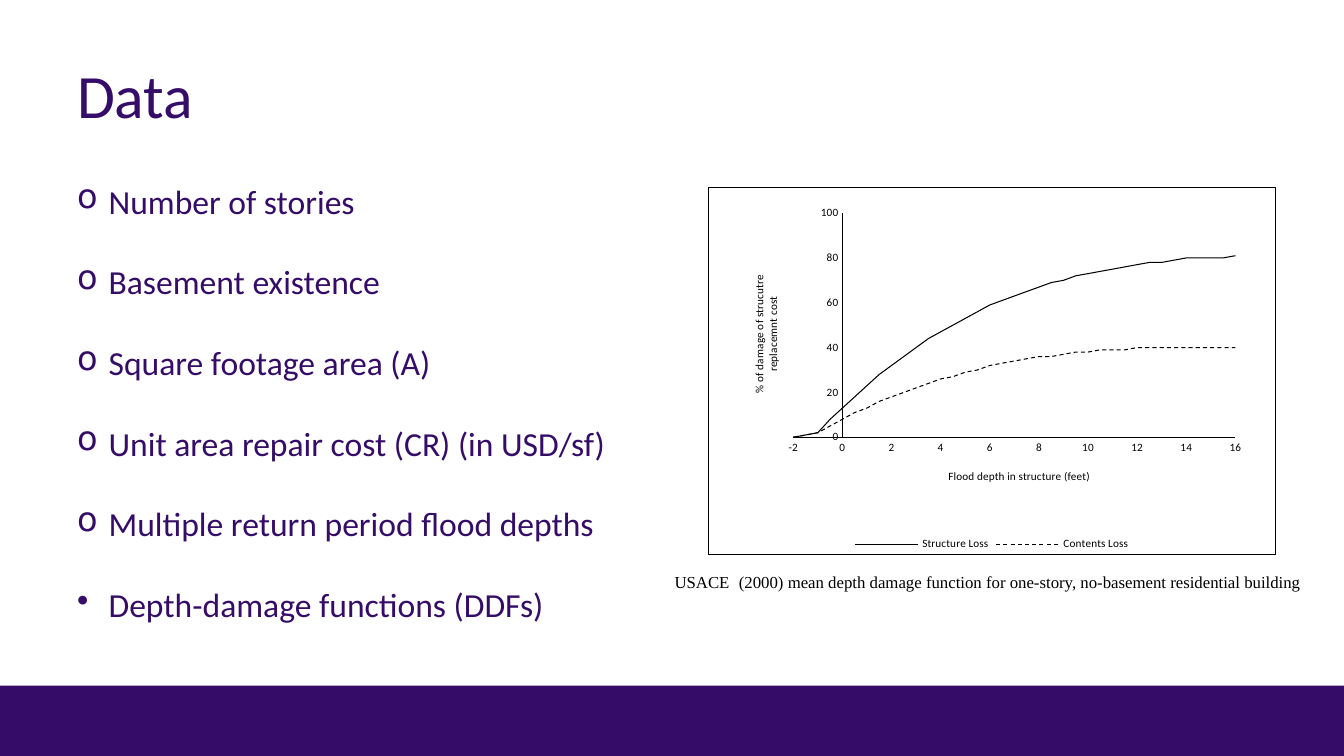
from lxml.etree import SubElement
from pptx import Presentation
from pptx.chart.data import XyChartData
from pptx.dml.color import RGBColor
from pptx.enum.chart import XL_CHART_TYPE, XL_LEGEND_POSITION, XL_TICK_LABEL_POSITION, XL_TICK_MARK
from pptx.enum.dml import MSO_LINE
from pptx.enum.shapes import MSO_SHAPE
from pptx.enum.text import MSO_ANCHOR, MSO_AUTO_SIZE, PP_ALIGN
from pptx.oxml import parse_xml
from pptx.oxml.ns import nsdecls, qn
from pptx.util import Pt

EMU_PER_PX = 9525
PURPLE, BLACK, WHITE = "350D68", "000000", "FFFFFF"
SANS, SERIF = "Calibri", "Times New Roman"

STRUCTURE_LOSS = [0, 1, 2, 8, 13, 18, 23, 28, 32, 36, 40, 44, 47, 50, 53, 56, 59, 61, 63,
                  65, 67, 69, 70, 72, 73, 74, 75, 76, 77, 78, 78, 79, 80, 80, 80, 80, 81]
CONTENTS_LOSS = [0, 1, 2, 5, 8, 11, 13, 16, 18, 20, 22, 24, 26, 27, 29, 30, 32, 33, 34,
                 35, 36, 36, 37, 38, 38, 39, 39, 39] + [40] * 9
FLOOD_DEPTHS = [-2 + step / 2 for step in range(len(STRUCTURE_LOSS))]

DATA_ITEMS = [
    ("o", "Number of stories"),
    ("o", "Basement existence"),
    ("o", "Square footage area (A)"),
    ("o", "Unit area repair cost (CR) (in USD/sf)"),
    ("o", "Multiple return period flood depths"),
    ("•", "Depth-damage functions (DDFs)"),
]


def px(length):
    return round(length * EMU_PER_PX)


def color(hex_string):
    return RGBColor.from_string(hex_string)


def set_layout(parent, before, **values):
    """Put a manual chart layout, in fractions of the chart, after a child element."""
    for old_layout in parent.findall(qn("c:layout")):
        parent.remove(old_layout)
    layout = parse_xml(f"<c:layout {nsdecls('c')}><c:manualLayout/></c:layout>")
    for name, value in values.items():
        SubElement(layout[0], qn(f"c:{name}")).set("val", str(value))
    if before is None:
        parent.insert(0, layout)
    else:
        before.addnext(layout)


class SlideBuilder:
    def __init__(self, slide):
        self.slide = slide

    def style(self, font, size, hex_color, name=SANS):
        font.size, font.name, font.bold = Pt(size), name, False
        font.color.rgb = color(hex_color)

    def band(self, left, top, width, height):
        shape = self.slide.shapes.add_shape(
            MSO_SHAPE.RECTANGLE, px(left), px(top), px(width), px(height))
        shape.shadow.inherit = False
        shape.fill.solid()
        shape.fill.fore_color.rgb = color(PURPLE)
        shape.line.fill.background()

    def text_frame(self, left, top, width, height, wrap=True, anchor=MSO_ANCHOR.MIDDLE):
        box = self.slide.shapes.add_textbox(px(left), px(top), px(width), px(height))
        frame = box.text_frame
        frame.word_wrap, frame.vertical_anchor = wrap, anchor
        return frame

    def run(self, paragraph, text, size, hex_color, name=SANS):
        run = paragraph.add_run()
        run.text = text
        self.style(run.font, size, hex_color, name)

    def bullet_list(self, items, left, top, width, height):
        frame = self.text_frame(left, top, width, height, anchor=MSO_ANCHOR.TOP)
        frame.auto_size = MSO_AUTO_SIZE.SHAPE_TO_FIT_TEXT
        for index, (bullet, text) in enumerate(items):
            paragraph = frame.add_paragraph() if index else frame.paragraphs[0]
            paragraph.alignment, paragraph.line_spacing = PP_ALIGN.JUSTIFY, 2.0
            properties = paragraph._p.get_or_add_pPr()
            properties.set("marL", str(px(30)))
            properties.set("indent", str(px(-30)))
            SubElement(properties, qn("a:buChar")).set("char", bullet)
            self.run(paragraph, text, 24, PURPLE)

    def outline(self, line):
        line.color.rgb = color(BLACK)
        line.width = Pt(0.75)

    def axis(self, axis, title_lines, low, high, step, title_left, title_top):
        axis.minimum_scale, axis.maximum_scale, axis.major_unit = low, high, step
        axis.has_major_gridlines = False
        axis.major_tick_mark = axis.minor_tick_mark = XL_TICK_MARK.NONE
        axis.tick_label_position = XL_TICK_LABEL_POSITION.NEXT_TO_AXIS
        axis.tick_labels.number_format = "General"
        axis.tick_labels.number_format_is_linked = False
        self.style(axis.tick_labels.font, 8, BLACK)
        self.outline(axis.format.line)
        frame = axis.axis_title.text_frame
        for index, text in enumerate(title_lines):
            paragraph = frame.add_paragraph() if index else frame.paragraphs[0]
            self.style(paragraph.font, 8, BLACK)
            self.run(paragraph, text, 8, BLACK)
        title = axis.axis_title._element
        set_layout(title, title.find(qn("c:tx")), xMode="edge", yMode="edge",
                   x=title_left, y=title_top)

    def damage_chart(self, left, top, width, height):
        data = XyChartData()
        for name, losses in (("Structure Loss", STRUCTURE_LOSS), ("Contents Loss", CONTENTS_LOSS)):
            series = data.add_series(name)
            for depth, loss in zip(FLOOD_DEPTHS, losses):
                series.add_data_point(depth, loss)
        chart = self.slide.shapes.add_chart(
            XL_CHART_TYPE.XY_SCATTER_LINES_NO_MARKERS,
            px(left), px(top), px(width), px(height), data).chart
        self.style(chart.font, 8, BLACK)
        chart.has_title = False
        chart.has_legend = True
        chart.legend.position = XL_LEGEND_POSITION.BOTTOM
        chart.legend.include_in_layout = False
        self.style(chart.legend.font, 8, BLACK)
        for series, dash in zip(chart.plots[0].series, (MSO_LINE.SOLID, MSO_LINE.DASH)):
            series.smooth = False
            self.outline(series.format.line)
            series.format.line.dash_style = dash
        self.axis(chart.category_axis, ["Flood depth in structure (feet)"],
                  -2, 16, 2, 0.42, 0.76)
        self.axis(chart.value_axis, ["% of damage of strucutre", "replacemnt cost"],
                  0, 100, 20, 0.07, 0.23)
        chart_space = chart._chartSpace
        set_layout(chart_space.chart.plotArea, None, layoutTarget="inner",
                   xMode="edge", yMode="edge", x=0.15, y=0.07, w=0.78, h=0.61)
        chart_space.chart.addnext(parse_xml(
            f"<c:spPr {nsdecls('c', 'a')}>"
            f'<a:solidFill><a:srgbClr val="{WHITE}"/></a:solidFill>'
            f'<a:ln w="{Pt(0.75)}"><a:solidFill><a:srgbClr val="{BLACK}"/></a:solidFill></a:ln>'
            "</c:spPr>"))


def main():
    presentation = Presentation()
    presentation.slide_width, presentation.slide_height = px(1280), px(720)
    slide = presentation.slides.add_slide(presentation.slide_layouts[6])
    builder = SlideBuilder(slide)

    builder.band(0, 653, 1280, 67)
    title = builder.text_frame(64, 29, 205, 120)
    builder.run(title.paragraphs[0], "Data", 44, PURPLE)
    builder.bullet_list(DATA_ITEMS, 64, 129, 569, 475)
    builder.damage_chart(674, 178, 541, 351)

    caption = builder.text_frame(633, 540, 624, 29, wrap=False)
    caption.auto_size = MSO_AUTO_SIZE.SHAPE_TO_FIT_TEXT
    paragraph = caption.paragraphs[0]
    builder.run(paragraph, "USACE", 12, BLACK, SERIF)
    builder.run(paragraph, "\N{NO-BREAK SPACE}" * 2, 8, BLACK)
    builder.run(paragraph, " (2000) mean depth damage function for one-story, "
                "no-basement residential building", 12, BLACK, SERIF)
    presentation.save("out.pptx")


if __name__ == "__main__":
    main()
